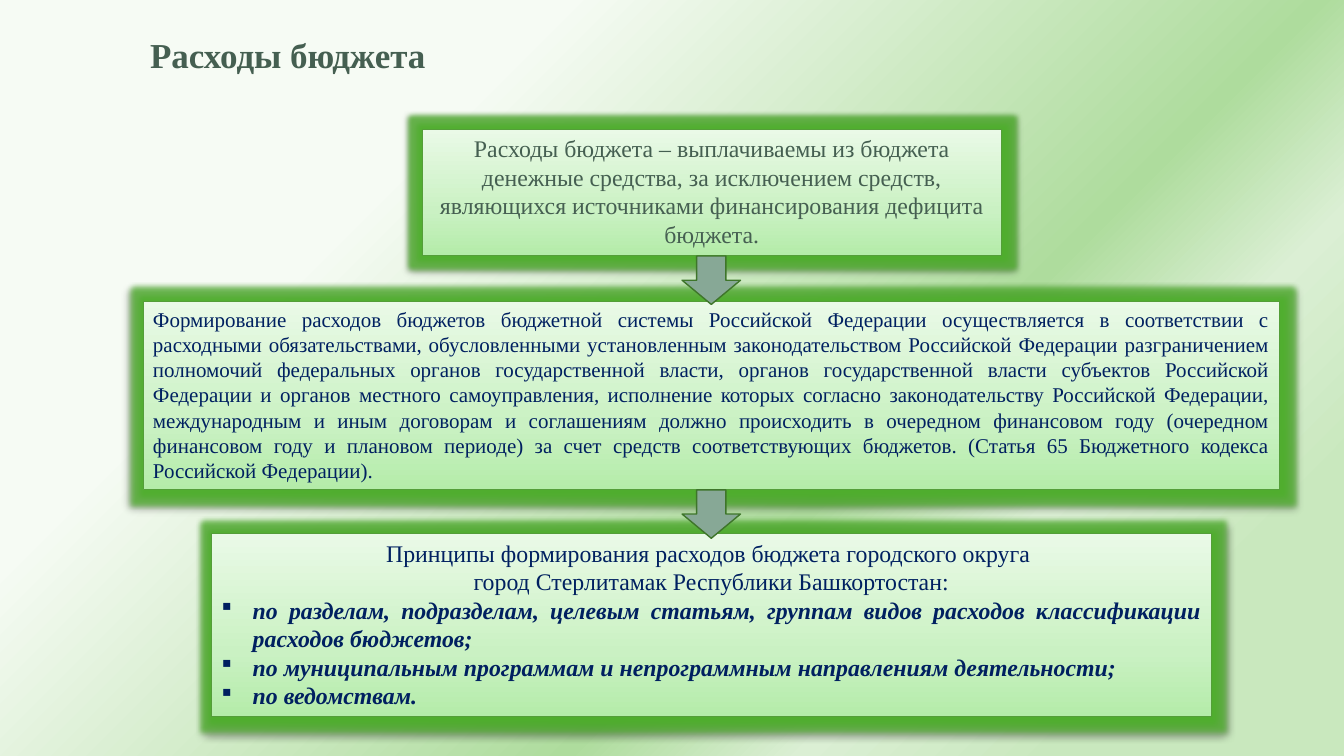
from lxml.etree import SubElement
from pptx import Presentation
from pptx.dml.color import RGBColor
from pptx.enum.shapes import MSO_SHAPE
from pptx.enum.text import MSO_ANCHOR, MSO_AUTO_SIZE, PP_ALIGN
from pptx.oxml.ns import qn
from pptx.util import Inches, Pt

FONT = "Times New Roman"
GREEN, NAVY = "455F51", "002060"
PAGE_STOPS = [(27, "F6FBF4"), (63, "AEDC9D"), (74, "DBEFD4"), (86, "C9E8BE")]
BOX_STOPS = [(0, "B4ECA9"), (35, "CAF1C3"), (100, "EAFAE7")]
ARROW_LEFT = 6.77

DEFINITION = (
    "Расходы бюджета – выплачиваемы из бюджета денежные средства, за исключением "
    "средств, являющихся источниками финансирования дефицита бюджета."
)
FORMATION = (
    "Формирование расходов бюджетов бюджетной системы Российской Федерации "
    "осуществляется в соответствии с расходными обязательствами, обусловленными "
    "установленным законодательством Российской Федерации разграничением полномочий "
    "федеральных органов государственной власти, органов государственной власти "
    "субъектов Российской Федерации и органов местного самоуправления, исполнение "
    "которых согласно законодательству Российской Федерации, международным и иным "
    "договорам и соглашениям должно происходить в очередном финансовом году "
    "(очередном финансовом году и плановом периоде) за счет средств соответствующих "
    "бюджетов. (Статья 65 Бюджетного кодекса Российской Федерации)."
)
PRINCIPLES_HEADING = [
    "Принципы формирования расходов бюджета городского округа ",
    "город Стерлитамак Республики Башкортостан:",
]
PRINCIPLES = [
    "по разделам, подразделам, целевым статьям, группам видов расходов "
    "классификации расходов бюджетов;",
    "по муниципальным программам и непрограммным направлениям деятельности;",
    "по ведомствам.",
]


def rgb(value):
    return RGBColor.from_string(value)


def add_color(parent, value, alpha=100):
    color = SubElement(parent, qn("a:srgbClr"), val=value)
    if alpha < 100:
        SubElement(color, qn("a:alpha"), val=str(alpha * 1000))


def set_gradient(fill, owner, stops, angle):
    fill.gradient()
    grad = next(owner.iter(qn("a:gradFill")))
    for child in list(grad):
        grad.remove(child)
    gs_list = SubElement(grad, qn("a:gsLst"))
    for position, value in stops:
        add_color(SubElement(gs_list, qn("a:gs"), pos=str(position * 1000)), value)
    SubElement(grad, qn("a:lin"), ang=str(angle * 60000), scaled="0")


def add_glow(sp):
    effects = sp._element.spPr.find(qn("a:effectLst"))
    glow = SubElement(effects, qn("a:glow"), rad=str(Pt(7)))
    add_color(glow, "4DB02A", 75)
    shadow = SubElement(effects, qn("a:outerShdw"), blurRad=str(Pt(3.1)),
                        dist=str(Pt(1.6)), dir="5400000", rotWithShape="0")
    add_color(shadow, "000000", 38)


def add_text(tf, text, size, color, align, bold=False, italic=False, bullet=None):
    p = tf.paragraphs[0] if not tf.text else tf.add_paragraph()
    p.alignment = align
    if bullet:
        pPr = p._p.get_or_add_pPr()
        pPr.set("marL", str(Inches(0.31)))
        pPr.set("indent", str(Inches(-0.31)))
        SubElement(pPr, qn("a:buFont"), typeface="Wingdings", charset="2")
        SubElement(pPr, qn("a:buChar"), char=bullet)
    r = p.add_run()
    r.text = text
    r.font.name = FONT
    r.font.size = Pt(size)
    r.font.bold = bold
    r.font.italic = italic
    r.font.color.rgb = rgb(color)
    return p


def add_shape(s, kind, left, top, width, height, line, weight):
    sp = s.shapes.add_shape(kind, Inches(left), Inches(top), Inches(width), Inches(height))
    sp.shadow.inherit = False
    sp.line.color.rgb = rgb(line)
    sp.line.width = Pt(weight)
    return sp


def add_box(s, left, top, width, height):
    sp = add_shape(s, MSO_SHAPE.RECTANGLE, left, top, width, height, "549E39", 0.5)
    set_gradient(sp.fill, sp._element.spPr, BOX_STOPS, 270)
    add_glow(sp)
    tf = sp.text_frame
    tf.word_wrap = True
    tf.vertical_anchor = MSO_ANCHOR.TOP
    return tf


def add_arrow(s, top):
    sp = add_shape(s, MSO_SHAPE.DOWN_ARROW, ARROW_LEFT, top, 0.58, 0.48, "3E752A", 1)
    sp.fill.solid()
    sp.fill.fore_color.rgb = rgb("87A896")


def add_title(s, text):
    title = s.shapes.title
    title.left, title.top = Inches(1.39), Inches(0.3)
    title.width, title.height = Inches(11.28), Inches(0.54)
    tf = title.text_frame
    tf.auto_size = MSO_AUTO_SIZE.NONE
    tf.vertical_anchor = MSO_ANCHOR.MIDDLE
    p = add_text(tf, text, 25, GREEN, PP_ALIGN.LEFT, bold=True)
    p.line_spacing = 0.9


def main():
    prs = Presentation()
    prs.slide_width, prs.slide_height = Inches(13.34), Inches(7.5)
    s = prs.slides.add_slide(prs.slide_layouts[5])
    set_gradient(s.background.fill, s._element, PAGE_STOPS, 45)
    add_title(s, "Расходы бюджета")

    definition = add_box(s, 4.19, 1.28, 5.75, 1.25)
    add_text(definition, DEFINITION, 17, GREEN, PP_ALIGN.CENTER)

    formation = add_box(s, 1.42, 2.99, 11.28, 1.87)
    add_text(formation, FORMATION, 15, NAVY, PP_ALIGN.JUSTIFY)
    add_arrow(s, 2.54)

    principles = add_box(s, 2.1, 5.29, 9.92, 1.82)
    for text in PRINCIPLES_HEADING:
        add_text(principles, text, 17, NAVY, PP_ALIGN.CENTER)
    for text in PRINCIPLES:
        add_text(principles, text, 17, NAVY, PP_ALIGN.JUSTIFY,
                 bold=True, italic=True, bullet="§")
    add_arrow(s, 4.86)

    prs.save("out.pptx")


if __name__ == "__main__":
    main()
